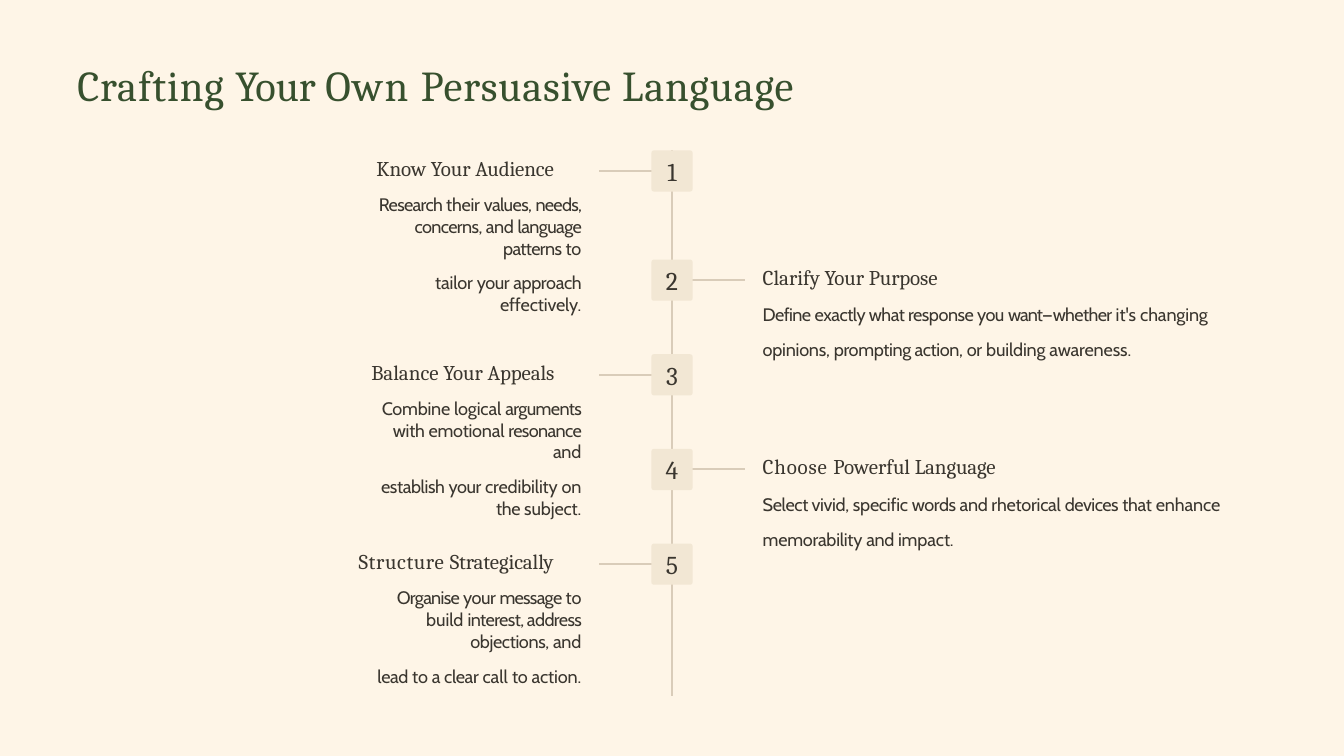
from pptx import Presentation
from pptx.dml.color import RGBColor
from pptx.enum.shapes import MSO_CONNECTOR, MSO_SHAPE
from pptx.enum.text import MSO_ANCHOR, PP_ALIGN
from pptx.oxml.ns import qn
from pptx.util import Inches, Pt

STRAIGHT = MSO_CONNECTOR.STRAIGHT
ROUNDED = MSO_SHAPE.ROUNDED_RECTANGLE
MIDDLE, TOP = MSO_ANCHOR.MIDDLE, MSO_ANCHOR.TOP
LEFT, CENTER, RIGHT = PP_ALIGN.LEFT, PP_ALIGN.CENTER, PP_ALIGN.RIGHT
COLORS = {name: RGBColor.from_string(value) for name, value in {
    "page": "FEF5E7", "title": "37502E", "text": "3A362F",
    "line": "D9CCB9", "node": "F2E7D4"}.items()}
SERIF, SANS = "Cambria", "Cabin"

WIDTH, HEIGHT = 16, 9
AXIS = WIDTH / 2
NODE = 0.49
FIRST_TOP, SECOND_TOP, STEP = 1.79, 3.09, 1.127
BRANCH_START, BRANCH_END = 0.22, 0.87
LEFT_TEXT, LEFT_WIDTH = 4.27, 2.65
RIGHT_TEXT, RIGHT_WIDTH = 9.08, 5.6
BODY_MARGIN = 0.17

# Each step: heading indent, heading, body paragraphs; spans are (text, letter spacing in points)
STEPS = [
    (0.21, [("Know Your ", 0), ("Audience", -0.1)], [
        [("Research ", -0.6), ("their ", -0.2), ("values, ", -0.5), ("needs, ", -0.6),
         ("concerns, ", -0.5), ("and ", -0.3), ("language patterns ", -0.5), ("to", -0.2)],
        [("tailor ", -0.1), ("your ", -0.4), ("approach ", -0.3), ("effectively.", -0.1)]]),
    (0, [("Clarify Your ", 0), ("Purpose", -0.1)], [
        [("Define ", -0.5), ("exactly what response you ", -0.4), ("want—", -0.8),
         ("whether ", -0.5), ("it's ", 0), ("changing ", -0.1), ("opinions, ", -0.2),
         ("prompting action, ", -0.3), ("or ", -0.2), ("building awareness.", -0.1)]]),
    (0.15, [("Balance Your ", 0), ("Appeals", -0.1)], [
        [("Combine ", -0.2), ("logical ", -0.1), ("arguments ", -0.5),
         ("with emotional ", -0.2), ("resonance ", -0.5), ("and", -0.2)],
        [("establish ", -0.3), ("your ", -0.4), ("credibility on ", -0.1),
         ("the ", -0.3), ("subject.", -0.1)]]),
    (0, [("Choose ", 0.7), ("Powerful ", 0), ("Language", -0.1)], [
        [("Select vivid, ", -0.3), ("specific ", -0.2), ("words ", -0.4), ("and ", -0.3),
         ("rhetorical ", -0.2), ("devices ", -0.4), ("that ", -0.2), ("enhance ", -0.1),
         ("memorability ", -0.2), ("and ", -0.3), ("impact.", -0.1)]]),
    (0, [("Structure ", 0.5), ("Strategically", -0.1)], [
        [("Organise ", -0.6), ("your ", -0.4), ("message ", -0.6), ("to ", -0.1),
         ("build ", 0), ("interest, address ", -0.5), ("objections, ", -0.3), ("and", -0.2)],
        [("lead ", -0.3), ("to ", -0.1), ("a ", -0.4), ("clear ", -0.3),
         ("call ", 0), ("to action.", -0.1)]]),
]

deck = Presentation()
deck.slide_width, deck.slide_height = Inches(WIDTH), Inches(HEIGHT)
page = deck.slides.add_slide(deck.slide_layouts[6])
page.background.fill.solid()
page.background.fill.fore_color.rgb = COLORS["page"]


def write(frame, spans, font, size, color="text", align=LEFT, before=1, margin=0):
    """Fill the frame's empty first paragraph, or append one, and return it."""
    para = frame.paragraphs[0]
    if para.runs:
        para = frame.add_paragraph()
    para.alignment, para.space_before = align, Pt(before)
    para.font.name, para.font.size = font, Pt(size)
    para.font.color.rgb = COLORS[color]
    para._p.get_or_add_pPr().set("marL", str(Inches(margin)))
    for text, spacing in spans:
        span = para.add_run()
        span.text = text
        span._r.get_or_add_rPr().set("spc", str(round(spacing * 100)))
    return para


def draw_line(x1, y1, x2, y2):
    line = page.shapes.add_connector(STRAIGHT, Inches(x1), Inches(y1), Inches(x2), Inches(y2))
    line.line.color.rgb = COLORS["line"]
    line.line.width = Pt(1.75)
    line._element.spPr.append(line._element.makeelement(qn("a:effectLst"), {}))


title_box = page.shapes.add_textbox(Inches(0.92), Inches(0.43), Inches(9.47), Inches(1.35))
step_frames = [title_box.text_frame]
write(title_box.text_frame,
      [("Crafting ", 0.8), ("Your ", 0), ("Own ", 1.4), ("Persuasive Language", 0.7)],
      SERIF, 36.5, "title")

draw_line(AXIS, FIRST_TOP, AXIS, 8.29)
for index, (indent, heading, bodies) in enumerate(STEPS):
    top = SECOND_TOP + (index - 1) * STEP if index else FIRST_TOP
    on_left = index % 2 == 0
    side = -1 if on_left else 1
    middle = top + NODE / 2
    draw_line(AXIS + side * BRANCH_START, middle, AXIS + side * BRANCH_END, middle)

    node = page.shapes.add_shape(ROUNDED, Inches(AXIS - NODE / 2), Inches(top),
                                 Inches(NODE), Inches(NODE))
    node.adjustments[0] = 0.06
    node.shadow.inherit = False
    node.fill.solid()
    node.fill.fore_color.rgb = COLORS["node"]
    node.line.fill.background()
    node.text_frame.vertical_anchor = MIDDLE
    write(node.text_frame, [(str(index + 1), -0.5)], SERIF, 22, align=CENTER, before=0)

    x, width = (LEFT_TEXT, LEFT_WIDTH) if on_left else (RIGHT_TEXT, RIGHT_WIDTH)
    box = page.shapes.add_textbox(Inches(x), Inches(top + 0.05), Inches(width), Inches(1.16))
    step_frames += [node.text_frame, box.text_frame]
    write(box.text_frame, heading, SERIF, 18, margin=indent)
    for body in bodies:
        if on_left:
            write(box.text_frame, body, SANS, 15.5, align=RIGHT, before=11.2, margin=BODY_MARGIN)
        else:
            para = write(box.text_frame, body, SANS, 15.5, before=0.7)
            para.line_spacing = Pt(30)

for frame in step_frames:
    frame.word_wrap = True
    frame.margin_left = frame.margin_right = frame.margin_bottom = 0
    frame.margin_top = 0 if frame.vertical_anchor == MIDDLE else Inches(0.01)
title_box.text_frame.margin_top = Inches(0.27)
title_box.text_frame.vertical_anchor = TOP

deck.save("out.pptx")
